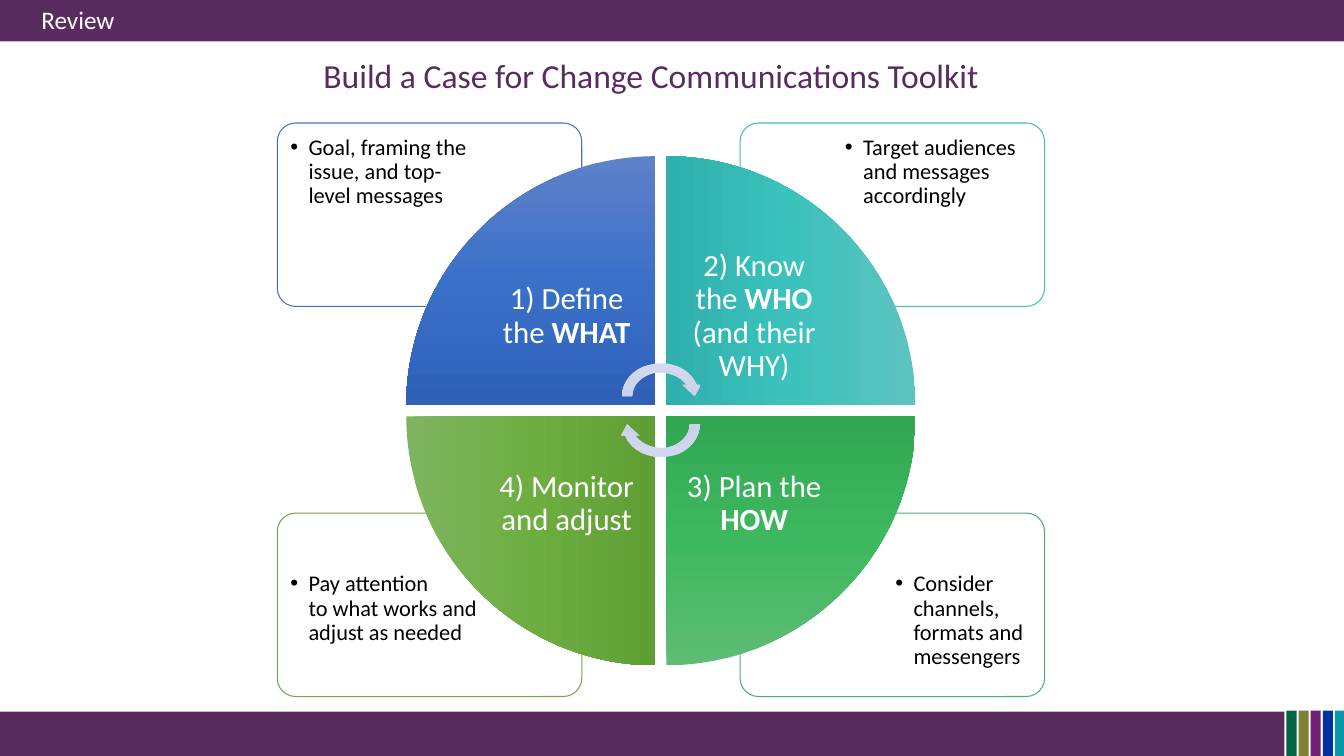
import copy

import pptx
import pptx.dml.color
import pptx.enum.shapes
import pptx.enum.text
import pptx.oxml
import pptx.oxml.ns
import pptx.util

Inches = pptx.util.Inches
Pt = pptx.util.Pt
qn = pptx.oxml.ns.qn
SHAPES = pptx.enum.shapes.MSO_SHAPE
ALIGN = pptx.enum.text.PP_ALIGN
ANCHOR = pptx.enum.text.MSO_ANCHOR

PURPLE = "592C5F"
STRIPES = ["006647", "7E8034", "712177", "0033A0", "0996A9"]
RADIUS = 2.47
LABEL_SIZE = 1.74
LABEL_OFFSET = 0.72

STEPS = [
    {"column": 0, "row": 0, "line": "4372C3", "shades": ["5E81C9", "3B70C9", "2E60B8"],
     "label": [("1) Define the ", False), ("WHAT", True)],
     "note": "Goal, framing the issue, and top-level messages", "indent": 0.18},
    {"column": 1, "row": 0, "line": "43BCB8", "shades": ["5EC3BF", "3BC2BC", "30B0AC"],
     "label": [("2) Know the ", False), ("WHO", True), (" (and their WHY)", False)],
     "note": "Target audiences and messages accordingly", "indent": 0.18},
    {"column": 1, "row": 1, "line": "45B363", "shades": ["5EBC74", "3EB85F", "32A753"],
     "label": [("3) Plan the ", False), ("HOW", True)],
     "note": "Consider channels, formats and messengers", "indent": 0.68},
    {"column": 0, "row": 1, "line": "6FAA47", "shades": ["7EB45F", "6EAE41", "5F9E35"],
     "label": [("4) Monitor and adjust", False)],
     "note": "Pay attention\vto what works and adjust as needed", "indent": 0.18},
]

ARROW_SHADES = ["D4DAED", "CAD2EB", "AFB8D1"]
ARROW_START = (6.17, 3.93)
ARROW_SEGMENTS = [
    [(6.17, 3.77), (6.31, 3.63), (6.49, 3.61)],
    [(6.67, 3.58), (6.85, 3.67), (6.91, 3.82)],
    [(6.95, 3.82)],
    [(6.89, 3.93)],
    [(6.77, 3.82)],
    [(6.81, 3.82)],
    [(6.75, 3.73), (6.61, 3.68), (6.49, 3.7)],
    [(6.36, 3.73), (6.27, 3.82), (6.27, 3.93)],
]


def colour(hex_code):
    return pptx.dml.color.RGBColor.from_string(hex_code)


def set_font(paragraph, size, hex_code):
    paragraph.font.name = "Calibri"
    paragraph.font.size = Pt(size)
    paragraph.font.color.rgb = colour(hex_code)


def add_box(slide, preset, left, top, width, height, fill, line=None):
    box = slide.shapes.add_shape(
        preset, Inches(left), Inches(top), Inches(width), Inches(height))
    box.shadow.inherit = False
    box.fill.solid()
    box.fill.fore_color.rgb = colour(fill)
    if line:
        box.line.color.rgb = colour(line)
        box.line.width = Pt(0.75)
    else:
        box.line.fill.background()
    return box


def add_text(slide, left, top, width, height, inset_x, inset_y):
    holder = slide.shapes.add_textbox(
        Inches(left), Inches(top), Inches(width), Inches(height))
    frame = holder.text_frame
    frame.word_wrap = True
    frame.margin_left = frame.margin_right = Inches(inset_x)
    frame.margin_top = frame.margin_bottom = Inches(inset_y)
    return frame


def add_bullet(paragraph, indent, hanging):
    properties = paragraph._p.get_or_add_pPr()
    properties.set("marL", str(Inches(indent)))
    properties.set("indent", str(-Inches(hanging)))
    default_font = properties.find(qn("a:defRPr"))
    namespace = pptx.oxml.ns.nsdecls("a")
    for tag in ('buFont typeface="Arial"', 'buChar char="•"'):
        default_font.addprevious(pptx.oxml.parse_xml(f"<a:{tag} {namespace}/>"))


def fill_gradient(shape, shades):
    shape.fill.gradient()
    shape.fill.gradient_angle = 270
    stop_list = shape._element.spPr.find(".//" + qn("a:gsLst"))
    for _ in shades[2:]:
        stop_list.append(copy.deepcopy(stop_list[0]))
    for index, (stop, shade) in enumerate(zip(shape.fill.gradient_stops, shades)):
        stop.position = index / (len(shades) - 1)
        stop.color.rgb = colour(shade)


def bend_curves(outline, segments):
    path_element = outline._element.spPr.find(".//" + qn("a:pathLst"))[0]
    for corner_move in path_element.findall(qn("a:moveTo"))[:2]:
        path_element.remove(corner_move)
    lines = iter(path_element.findall(qn("a:lnTo")))
    for segment in segments:
        pieces = [next(lines) for _ in segment]
        if len(pieces) == 3:
            curve = pptx.oxml.parse_xml(
                f"<a:cubicBezTo {pptx.oxml.ns.nsdecls('a')}/>")
            pieces[0].addprevious(curve)
            for piece in pieces:
                curve.append(piece[0])
                path_element.remove(piece)


def add_outline(slide, left, top, width, height, start, segments, shades, rotation):
    builder = slide.shapes.build_freeform(Inches(left), Inches(top))
    builder.move_to(Inches(left + width), Inches(top + height))
    builder.move_to(Inches(start[0]), Inches(start[1]))
    points = [(Inches(x), Inches(y)) for segment in segments for x, y in segment]
    builder.add_line_segments(points, close=True)
    outline = builder.convert_to_shape()
    bend_curves(outline, segments)
    outline.shadow.inherit = False
    outline.line.fill.background()
    fill_gradient(outline, shades)
    outline.rotation = rotation
    return outline


def add_panel(slide, step):
    column, row = step["column"], step["row"]
    panel = add_box(slide, SHAPES.ROUNDED_RECTANGLE, 2.75 + 4.59 * column,
                    1.22 + 3.87 * row, 3.02, 1.82, "FFFFFF", step["line"])
    panel.adjustments[0] = 0.1
    frame = add_text(slide, 2.79 + 5.5 * column, 1.26 + 4.33 * row,
                     2.05, 1.29, 0.09, 0.09)
    note = frame.paragraphs[0]
    note.text = step["note"]
    note.line_spacing = 0.9
    set_font(note, 16, "000000")
    add_bullet(note, step["indent"], 0.18)


def add_quarter(slide, step, rotation):
    left, top = 4.03 + 2.58 * step["column"], 1.55 + 2.58 * step["row"]
    right, bottom = left + RADIUS, top + RADIUS
    handle = RADIUS * 0.45
    arc = [(left, top + handle), (left + handle, top), (right, top)]
    add_outline(slide, left, top, RADIUS, RADIUS, (left, bottom),
                [arc, [(right, bottom)]], step["shades"], rotation)
    frame = add_text(slide, left + LABEL_OFFSET * (1 - step["column"]),
                     top + LABEL_OFFSET * (1 - step["row"]),
                     LABEL_SIZE, LABEL_SIZE, 0.17, 0.17)
    frame.vertical_anchor = ANCHOR.MIDDLE
    label = frame.paragraphs[0]
    label.alignment = ALIGN.CENTER
    label.line_spacing = 0.9
    set_font(label, 22, "FFFFFF")
    for words, bold in step["label"]:
        run = label.add_run()
        run.text = words
        if bold:
            run.font.bold = True


def add_cycle_arrows(slide):
    for top, rotation in ((3.56, 0), (3.84, 180)):
        arrow = add_outline(slide, 6.13, 3.56, 0.85, 0.74, ARROW_START,
                            ARROW_SEGMENTS, ARROW_SHADES, rotation)
        arrow.top = Inches(top)


def add_bars(slide):
    add_box(slide, SHAPES.RECTANGLE, 0, 7.06, 12.74, 0.45, PURPLE)
    for index, stripe in enumerate(STRIPES):
        add_box(slide, SHAPES.RECTANGLE, 12.76 + 0.12 * index, 7.05, 0.1, 0.45, stripe)
    add_box(slide, SHAPES.RECTANGLE, 0, -0.01, 13.33, 0.42, PURPLE)


def add_titles(slide):
    title = slide.shapes.title
    slide.shapes._spTree.append(title._element)
    title.left, title.top = Inches(0.31), Inches(-0.01)
    title.width, title.height = Inches(0.97), Inches(0.4)
    title.text_frame.word_wrap = False
    title.text_frame.vertical_anchor = ANCHOR.MIDDLE
    section = title.text_frame.paragraphs[0]
    section.text = "Review"
    section.alignment = ALIGN.LEFT
    set_font(section, 18, "FFFFFF")
    heading = add_text(slide, 3.11, 0.5, 7.16, 0.5, 0.1, 0.05).paragraphs[0]
    heading.text = "Build a Case for Change Communications Toolkit"
    set_font(heading, 24, PURPLE)


def main():
    deck = pptx.Presentation()
    deck.slide_width, deck.slide_height = Inches(13.33), Inches(7.5)
    slide = deck.slides.add_slide(deck.slide_layouts[5])
    add_bars(slide)
    add_titles(slide)
    for step in STEPS:
        add_panel(slide, step)
    for index, step in enumerate(STEPS):
        add_quarter(slide, step, 90 * index)
    add_cycle_arrows(slide)
    deck.save("out.pptx")


if __name__ == "__main__":
    main()
